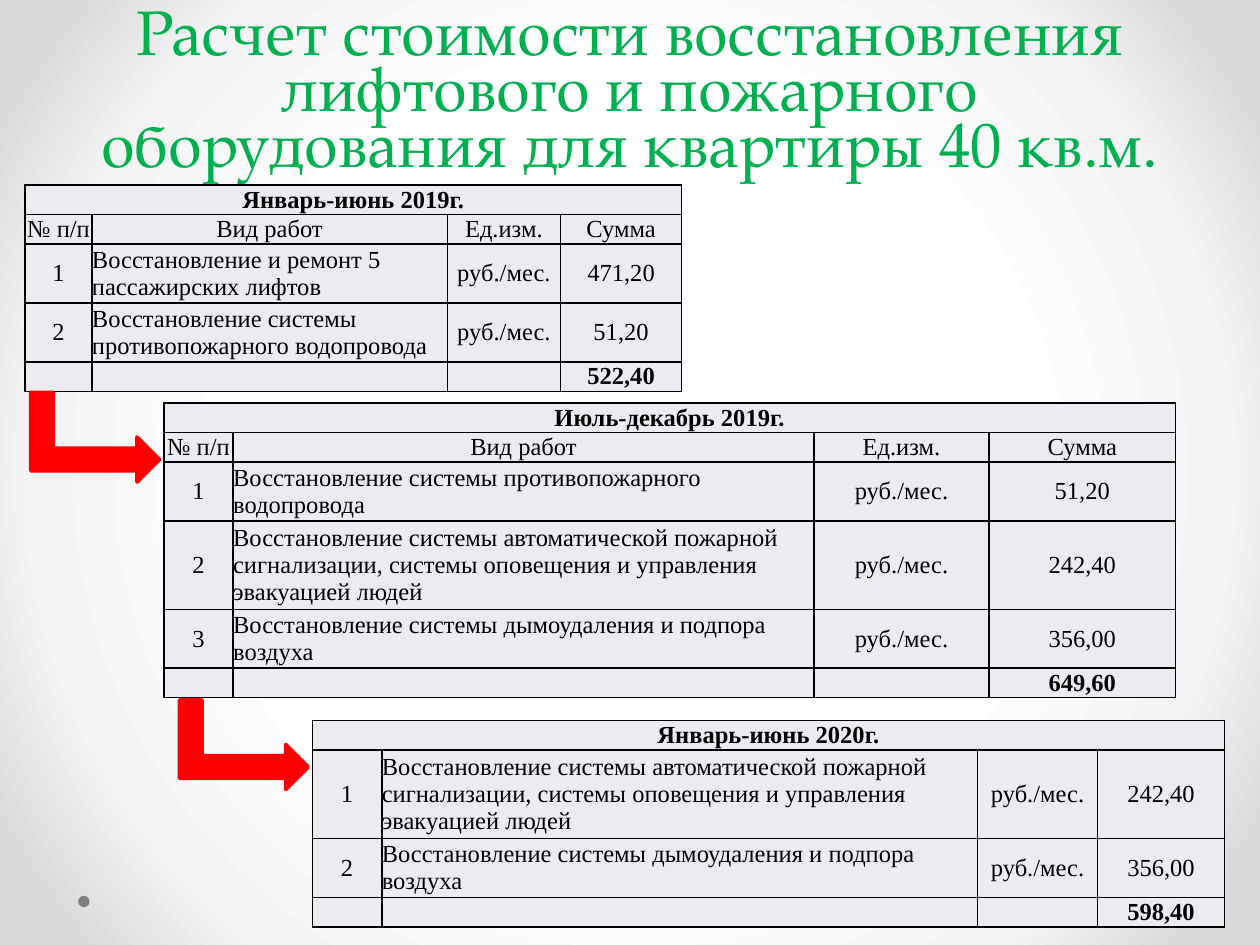
from lxml.etree import SubElement as Sub
from pptx import Presentation
from pptx.dml.color import RGBColor
from pptx.enum.shapes import MSO_SHAPE as Shape
from pptx.enum.text import MSO_ANCHOR as Anchor, PP_ALIGN as Align
from pptx.oxml.ns import qn
from pptx.util import Inches, Pt


def color(hex):
    return RGBColor.from_string(hex)


def style(obj, form):
    for name, val in form.items():
        setattr(obj, name, val)


pres = Presentation()
style(pres, {"slide_width": Inches(10), "slide_height": Inches(7.5)})
slide = pres.slides.add_slide(pres.slide_layouts[6])
shapes = slide.shapes

# Background: white centre fading to grey corners
slide.background.fill.gradient()
grad = slide.element.find(".//" + qn("a:gradFill"))
for node in list(grad):
    grad.remove(node)
stops = Sub(grad, qn("a:gsLst"))
for pos, tone in [(50, "FFFFFF"), (76, "F4F4F4"), (92, "DADADA")]:
    stop = Sub(stops, qn("a:gs"), pos=str(pos * 1000))
    Sub(stop, qn("a:srgbClr"), val=tone)
ring = Sub(grad, qn("a:path"), path="circle")
Sub(ring, qn("a:fillToRect"), {side: "50000" for side in "ltrb"})

# Footer dot
dot = shapes.add_shape(Shape.OVAL, Inches(0.62), Inches(7.11),
                       Inches(0.09), Inches(0.09))
dot.shadow.inherit = False
dot.fill.solid()
dot.fill.fore_color.rgb = color("808080")
dot.line.fill.background()

# Title
box = shapes.add_textbox(Inches(0.5), Inches(-0.27), Inches(9), Inches(1.75))
style(box.text_frame, {"word_wrap": True, "vertical_anchor": Anchor.BOTTOM})
para = box.text_frame.paragraphs[0]
style(para, {"alignment": Align.CENTER, "line_spacing": Pt(32)})
run = para.add_run()
run.text = "Расчет стоимости восстановления лифтового и пожарного оборудования для квартиры 40 кв.м."
style(run.font, {"size": Pt(36), "name": "TeX Gyre Pagella"})
run.font.color.rgb = color("00B050")

# Cost tables: place, column widths, text lines per row, rows
head = ["№ п/п", "Вид работ", "Ед.изм.", "Сумма"]
unit = "руб./мес."
lifts = "Восстановление и ремонт 5 пассажирских лифтов"
water = "Восстановление системы противопожарного водопровода"
alarm = ("Восстановление системы автоматической пожарной сигнализации, "
         "системы оповещения и управления эвакуацией людей")
smoke = "Восстановление системы дымоудаления и подпора воздуха"
tables = [
    (2.48, 5.72, [0.55, 4.73, 0.95, 1.01], [1, 3, 2, 1], [
        ["Январь-июнь 2020г.", "", "", ""],
        ["1", alarm, unit, "242,40"],
        ["2", smoke, unit, "356,00"],
        ["", "", "", "598,40"]]),
    (0.2, 1.47, [0.53, 2.82, 0.9, 0.96], [1, 1, 2, 2, 1], [
        ["Январь-июнь 2019г.", "", "", ""],
        head,
        ["1", lifts, unit, "471,20"],
        ["2", water, unit, "51,20"],
        ["", "", "", "522,40"]]),
    (1.3, 3.2, [0.55, 4.61, 1.39, 1.48], [1, 1, 2, 3, 2, 1], [
        ["Июль-декабрь 2019г.", "", "", ""],
        head,
        ["1", water, unit, "51,20"],
        ["2", alarm, unit, "242,40"],
        ["3", smoke, unit, "356,00"],
        ["", "", "", "649,60"]]),
]
pitch = 0.215
cell_form = {"vertical_anchor": Anchor.MIDDLE, "margin_left": 0,
             "margin_right": 0, "margin_top": 0, "margin_bottom": 0}
for left, top, cols, lines, rows in tables:
    frame = shapes.add_table(len(rows), 4, Inches(left), Inches(top),
                             Inches(sum(cols)), Inches(pitch * sum(lines)))
    table = frame.table
    style(table, {"first_row": False, "horz_banding": False})
    for col, width in zip(table.columns, cols):
        col.width = Inches(width)
    for row, count in zip(table.rows, lines):
        row.height = Inches(pitch * count)
    table.cell(0, 0).merge(table.cell(0, 3))
    for i, row in enumerate(rows):
        for j, text in enumerate(row):
            cell = table.cell(i, j)
            style(cell, cell_form)
            para = cell.text_frame.paragraphs[0]
            work = j == 1 and row is not head
            para.alignment = Align.LEFT if work else Align.CENTER
            if text:
                run = para.add_run()
                run.text = text
                style(run.font, {"size": Pt(14), "name": "Times New Roman",
                                 "bold": i in (0, len(rows) - 1)})
                run.font.color.rgb = color("000000")
            else:
                # Keeps empty cells as low as the text rows
                Sub(para._p, qn("a:endParaRPr"), sz="1400")
            # Borders come before the fill in the cell properties
            props = cell._tc.get_or_add_tcPr()
            for side in "LRTB":
                edge = Sub(props, qn("a:ln" + side), w=str(Pt(1)))
                Sub(Sub(edge, qn("a:solidFill")), qn("a:srgbClr"), val="000000")
            cell.fill.solid()
            cell.fill.fore_color.rgb = color("EAECF2")

# Bent arrows from each period to the next
for left, top in [(0.4, 2.96), (1.58, 5.4)]:
    arrow = shapes.add_shape(Shape.BENT_UP_ARROW, Inches(left), Inches(top),
                             Inches(0.71), Inches(1.02))
    arrow.rotation = 90
    arrow.shadow.inherit = False
    arrow.fill.solid()
    arrow.fill.fore_color.rgb = color("FF0000")
    arrow.line.color.rgb = color("FF0000")
    arrow.line.width = Pt(2.25)

pres.save("out.pptx")
